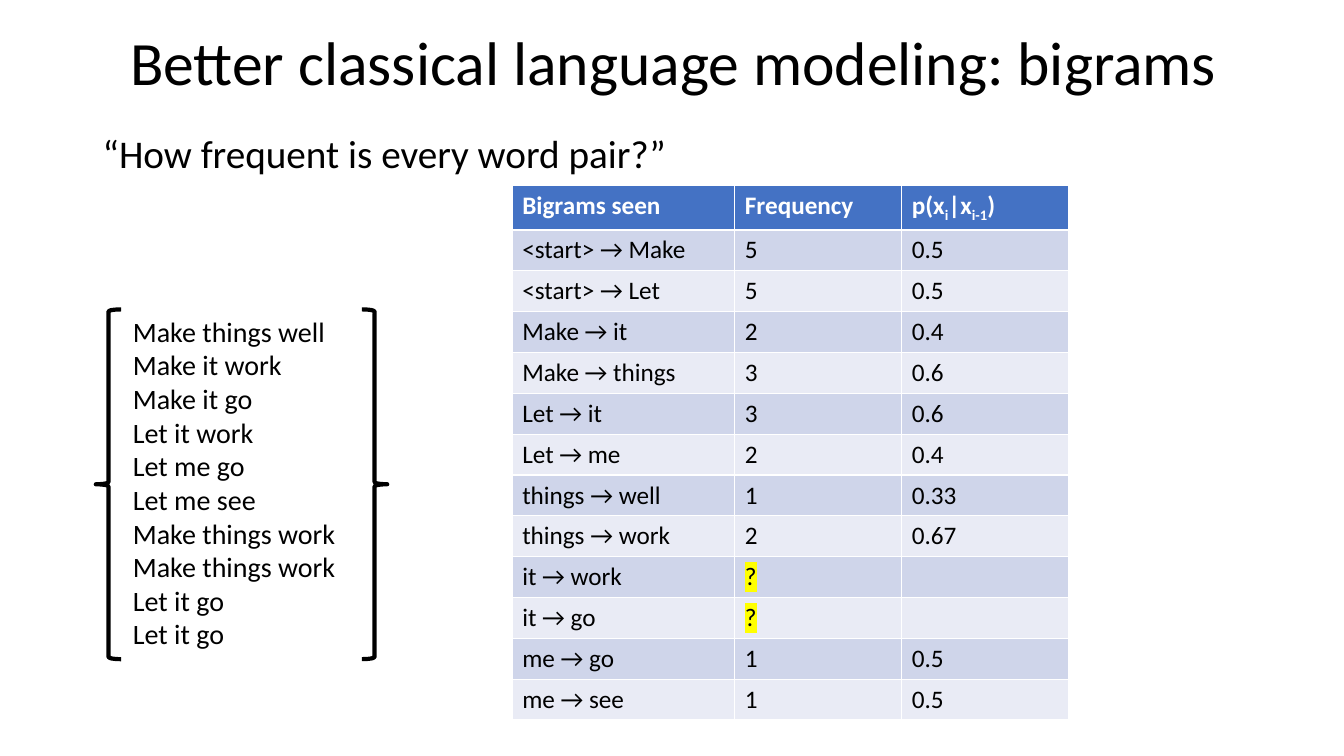
from lxml import etree
from pptx import Presentation
from pptx import util as u
from pptx.dml.color import RGBColor
from pptx.enum import shapes, text
from pptx.oxml import ns

WIDE, TALL = u.Inches(13.33), u.Inches(7.5)
FONT = "Calibri"
BLACK = RGBColor(0, 0, 0)
WHITE = RGBColor(255, 255, 255)
BLUE = RGBColor(0x44, 0x72, 0xC4)
BANDS = RGBColor(0xCF, 0xD5, 0xEA), RGBColor(0xE9, 0xEB, 0xF5)
YELLOW = RGBColor(255, 255, 0)

CORPUS = ["Make things well", "Make it work", "Make it go", "Let it work",
          "Let me go", "Let me see", "Make things work", "Make things work",
          "Let it go", "Let it go"]
PAIRS = [
    ("<start> → Make", "5", "0.5"),
    ("<start> → Let", "5", "0.5"),
    ("Make → it", "2", "0.4"),
    ("Make → things", "3", "0.6"),
    ("Let → it", "3", "0.6"),
    ("Let → me", "2", "0.4"),
    ("things → well", "1", "0.33"),
    ("things → work", "2", "0.67"),
    ("it → work", "?", ""),
    ("it → go", "?", ""),
    ("me → go", "1", "0.5"),
    ("me → see", "1", "0.5"),
]
HEADS = ["Bigrams seen", "Frequency", ""]
CHANCE = ["p(x", "i", "|x", "i-1", ")"]  # every second part is a subscript
SHARES = 0.4, 0.3, 0.3


def box(left, top, wide, tall):
    """Turn percentages of the slide's size into lengths."""
    return (int(WIDE * left / 100), int(TALL * top / 100),
            int(WIDE * wide / 100), int(TALL * tall / 100))


def style(run, size, color=BLACK, bold=False):
    font = run.font
    font.name, font.size, font.bold = FONT, u.Pt(size), bold
    font.color.rgb = color


def mark(run, color):
    """Highlight a run; the mark must follow its fill in the XML."""
    fill = run.font._element.find(ns.qn("a:solidFill"))
    light = etree.Element(ns.qn("a:highlight"))
    etree.SubElement(light, ns.qn("a:srgbClr")).set("val", str(color))
    fill.addnext(light)


def write(slide, area, lines, size, wrap=True):
    frame = slide.shapes.add_textbox(*area).text_frame
    frame.word_wrap = wrap
    frame.text = "\n".join(lines)
    for line in frame.paragraphs:
        for run in line.runs:
            style(run, size)
    return frame


def brace(slide, kind, left):
    shape = slide.shapes.add_shape(kind, *box(left, 40.93, 1.88, 46.27))
    shape.shadow.inherit = False
    shape.fill.background()
    shape.line.color.rgb = BLACK
    shape.line.width = u.Pt(3)


def paint(cell, fill, color, bold):
    cell.fill.solid()
    cell.fill.fore_color.rgb = fill
    line = cell.text_frame.paragraphs[0]
    line.font.size = u.Pt(18)
    for run in line.runs:
        style(run, 18, color, bold)
        if run.text == "?":
            mark(run, YELLOW)


def tabulate(slide, area):
    rows = [HEADS] + PAIRS
    table = slide.shapes.add_table(len(rows), len(HEADS), *area).table
    for col, share in zip(table.columns, SHARES):
        col.width = int(area[2] * share)
    for y, row in enumerate(rows):
        for x, word in enumerate(row):
            table.cell(y, x).text_frame.text = word
    last = table.cell(0, len(HEADS) - 1).text_frame.paragraphs[0]
    for n, part in enumerate(CHANCE):
        run = last.add_run()
        run.text = part
        if n % 2:
            run.font._element.set("baseline", "-25000")
    for y in range(len(rows)):
        for cell in table.rows[y].cells:
            if y == 0:
                paint(cell, BLUE, WHITE, True)
            else:
                paint(cell, BANDS[(y - 1) % 2], BLACK, False)


def main():
    deck = Presentation()
    deck.slide_width, deck.slide_height = WIDE, TALL
    slide = deck.slides.add_slide(deck.slide_layouts[6])

    title = write(slide, box(0.15, 0.27, 100, 16.93),
                  ["Better classical language modeling: bigrams"], 44)
    title.vertical_anchor = text.MSO_ANCHOR.MIDDLE
    title.paragraphs[0].alignment = text.PP_ALIGN.CENTER
    title.paragraphs[0].line_spacing = 0.9

    body = write(slide, box(6.9, 17.2, 86.27, 77.2),
                 ["“How frequent is every word pair?”"], 28)
    body.paragraphs[0].line_spacing = 0.9
    body.paragraphs[0].space_before = u.Pt(10)

    tabulate(slide, box(38.11, 24.53, 41.41, 70.27))
    write(slide, box(9.15, 40.93, 16.73, 46.27), CORPUS, 20, wrap=False)
    brace(slide, shapes.MSO_SHAPE.RIGHT_BRACE, 26.93)
    brace(slide, shapes.MSO_SHAPE.LEFT_BRACE, 7.13)
    deck.save("out.pptx")


if __name__ == "__main__":
    main()
